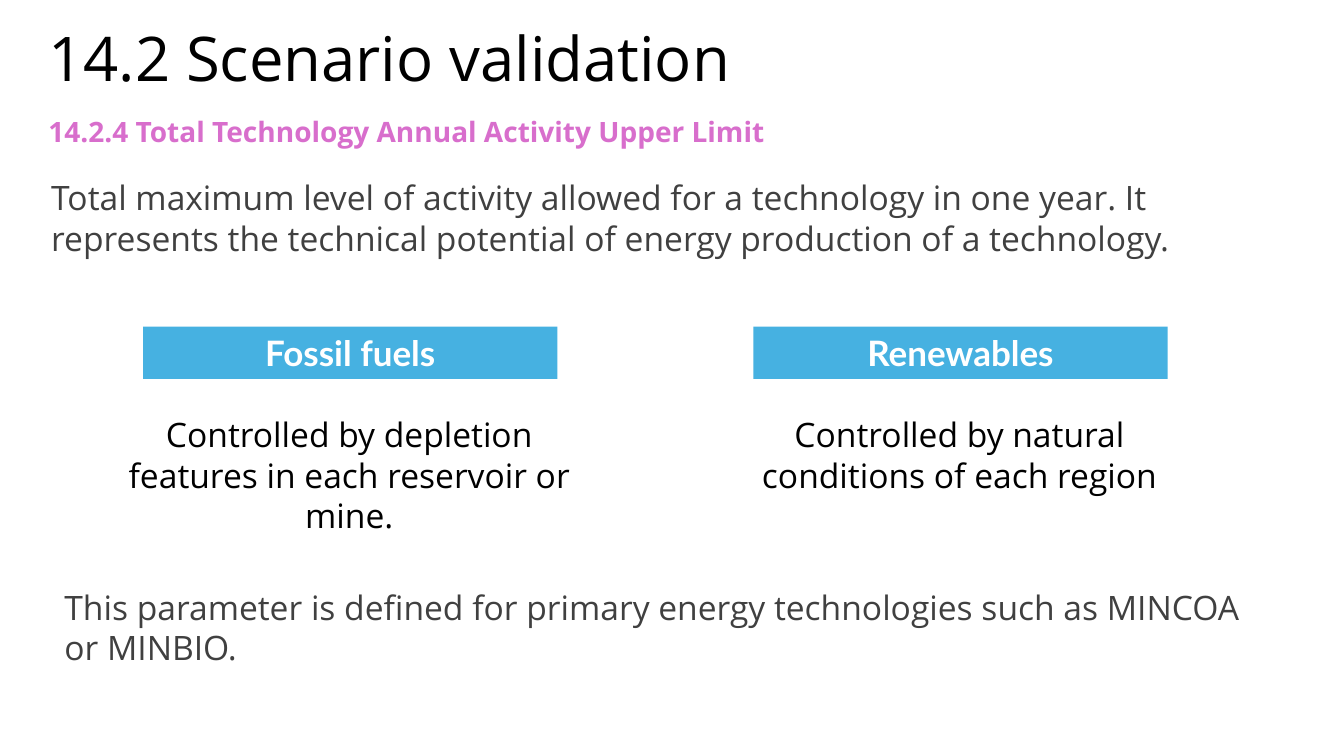
from pptx import Presentation
from pptx.dml.color import RGBColor
from pptx.enum.shapes import MSO_SHAPE
from pptx.enum.text import MSO_ANCHOR, PP_ALIGN
from pptx.util import Pt

# Content
TITLE = "14.2 Scenario validation"
SUBTITLE = "14.2.4 Total Technology Annual Activity Upper Limit"
DEFINITION = ("Total maximum level of activity allowed for a technology in one year. "
              "It represents the technical potential of energy production of a technology.")
SOURCES = [
    ("Fossil fuels", "Controlled by depletion features in each reservoir or mine.", 94.3),
    ("Renewables", "Controlled by natural conditions of each region", 65.5),
]
SCOPE = ("This parameter is defined for primary energy technologies "
         "such as MINCOA or MINBIO.")

COLORS = {"title": "000000", "subtitle": "D86ECC", "body": "404040",
          "band": "46B1E1", "band_text": "FFFFFF"}
BODY_FONT, BAND_FONT = "Open Sans", "Lato"

# Column geometry in points
BAND_LEFT, BAND_WIDTH = 102.2, 295.9
NOTE_LEFT, NOTE_WIDTH = 74.2, 350.6
COLUMN_STEP = 435.9


def write(box, text, size, color, font=BODY_FONT, bold=False,
          align=PP_ALIGN.LEFT, anchor=MSO_ANCHOR.TOP):
    frame = box.text_frame
    frame.word_wrap = True
    frame.vertical_anchor = anchor
    para = frame.paragraphs[0]
    para.alignment = align
    span = para.add_run()
    span.text = text
    span.font.name = font
    span.font.size = Pt(size)
    span.font.bold = bold
    span.font.color.rgb = RGBColor.from_string(COLORS[color])
    return para


def add_text(page, area, text, size, color, **style):
    box = page.shapes.add_textbox(*map(Pt, area))
    return write(box, text, size, color, **style)


def add_band(page, area, text):
    band = page.shapes.add_shape(MSO_SHAPE.RECTANGLE, *map(Pt, area))
    band.shadow.inherit = False
    band.fill.solid()
    band.fill.fore_color.rgb = RGBColor.from_string(COLORS["band"])
    band.line.fill.background()
    write(band, text, 25, "band_text", font=BAND_FONT, bold=True,
          align=PP_ALIGN.CENTER)


def main():
    deck = Presentation()
    deck.slide_width, deck.slide_height = Pt(960), Pt(540)
    page = deck.slides.add_slide(deck.slide_layouts[6])

    # Heading
    subtitle = add_text(page, (27.4, 78.5, 713.5, 31.7), SUBTITLE, 20,
                        "subtitle", bold=True)
    subtitle.space_after = Pt(12)
    title = add_text(page, (27.4, 11.5, 848.2, 59.8), TITLE, 44, "title",
                     anchor=MSO_ANCHOR.BOTTOM)
    title.line_spacing = 0.9

    # Definition
    add_text(page, (29.5, 123.1, 857.5, 65.5), DEFINITION, 24, "body")

    # One column per energy source
    for index, (name, note, note_height) in enumerate(SOURCES):
        shift = index * COLUMN_STEP
        add_band(page, (BAND_LEFT + shift, 233.3, BAND_WIDTH, 37.4), name)
        add_text(page, (NOTE_LEFT + shift, 292.3, NOTE_WIDTH, note_height),
                 note, 24, "title", align=PP_ALIGN.CENTER)

    # Scope
    add_text(page, (38.9, 415.4, 857.5, 65.5), SCOPE, 24, "body")

    deck.save("out.pptx")


if __name__ == "__main__":
    main()
